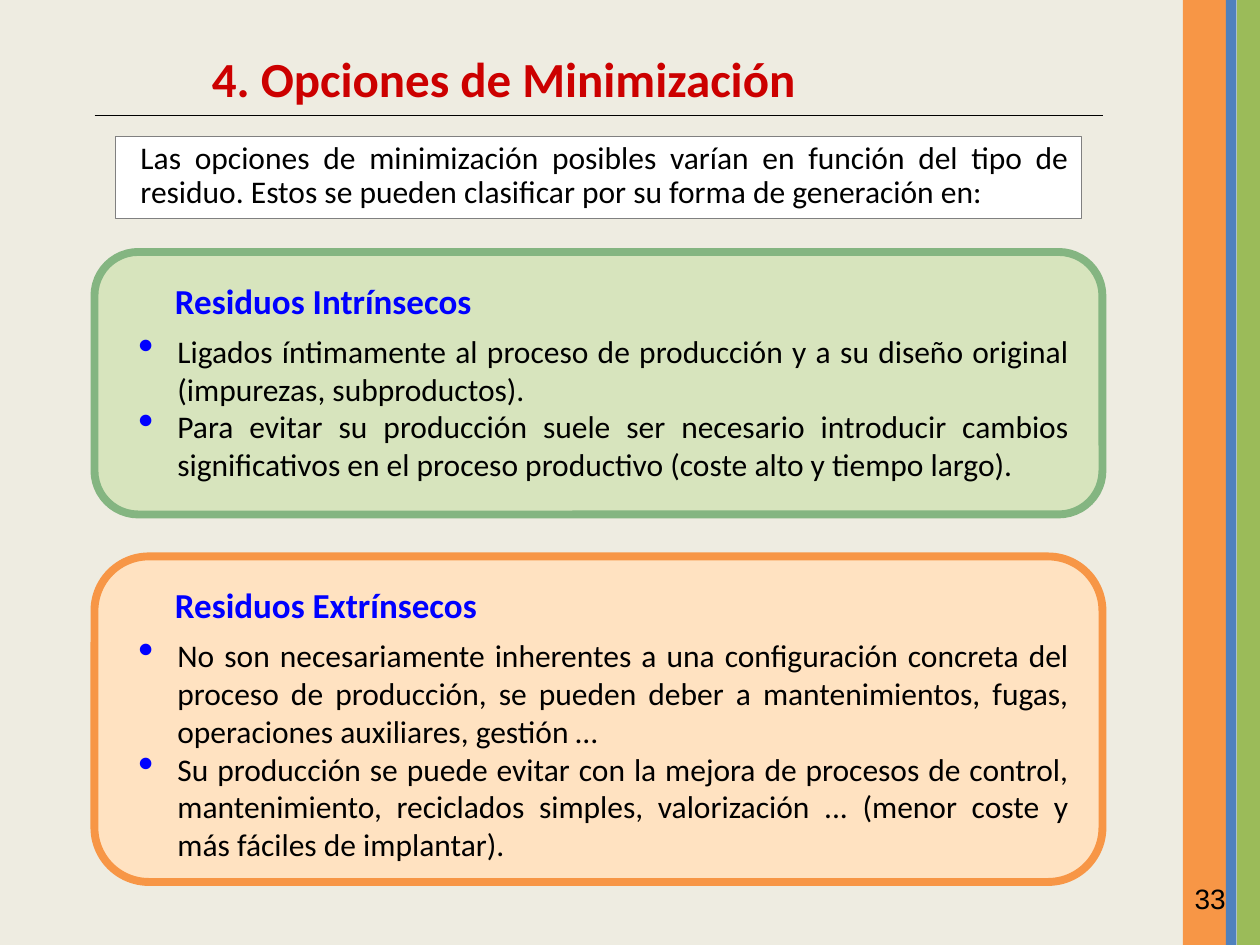
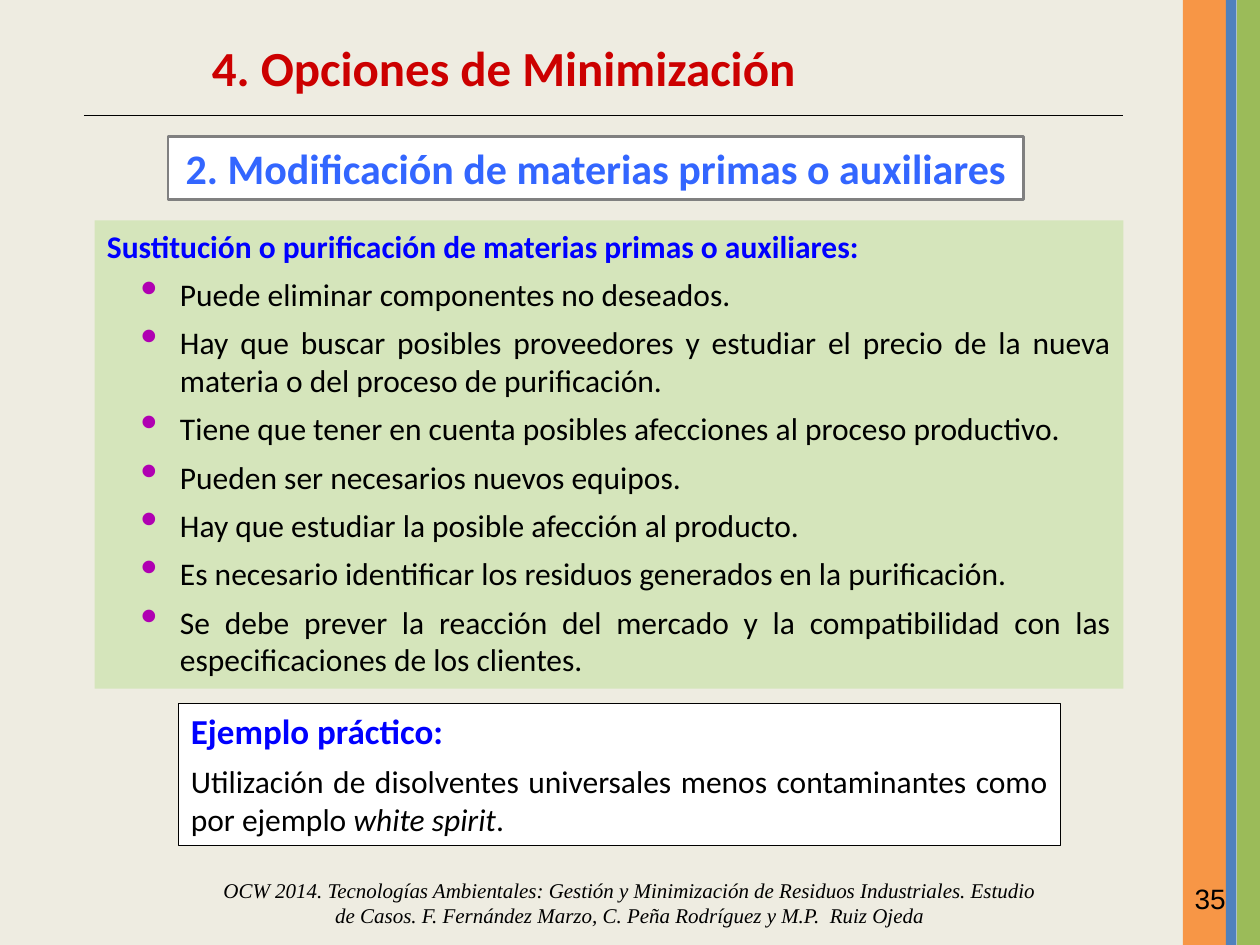
from lxml.etree import SubElement
from pptx import Presentation
from pptx.dml.color import RGBColor
from pptx.enum.shapes import MSO_CONNECTOR, MSO_SHAPE
from pptx.enum.text import MSO_ANCHOR, PP_ALIGN
from pptx.oxml.ns import qn
from pptx.util import Inches, Pt

CREAM = RGBColor(0xEE, 0xEC, 0xE1)
ORANGE = RGBColor(0xF7, 0x96, 0x46)
SKY = RGBColor(0x4F, 0x81, 0xBD)
GREEN = RGBColor(0x9B, 0xBB, 0x59)
WHITE = RGBColor(0xFF, 0xFF, 0xFF)
BLACK = RGBColor(0x00, 0x00, 0x00)
GRAY = RGBColor(0x80, 0x80, 0x80)
RED = RGBColor(0xCC, 0x00, 0x00)
BLUE = RGBColor(0x00, 0x00, 0xFF)
LIGHT_BLUE = RGBColor(0x33, 0x66, 0xFF)
PURPLE = RGBColor(0xB0, 0x00, 0xB2)
PALE_GREEN = RGBColor(0xD7, 0xE4, 0xBD)
LEAF = RGBColor(0x84, 0xB5, 0x81)
PEACH = RGBColor(0xFF, 0xE2, 0xC1)
LIST_GREEN = RGBColor(0xD5, 0xE5, 0xBB)

# Grid of 120 columns by 90 rows, twelve cells to the inch
CELL = Inches(1) / 12


def add_box(page, left, top, width, height, fill=None, line=None, weight=0.75,
            kind=MSO_SHAPE.RECTANGLE):
    """Place a shape, or a text box when there is no fill, in grid cells."""
    area = [round(length * CELL) for length in (left, top, width, height)]
    if fill is None:
        box = page.shapes.add_textbox(*area)
    else:
        box = page.shapes.add_shape(kind, *area)
        box.shadow.inherit = False
        box.fill.solid()
        box.fill.fore_color.rgb = fill
        if line is None:
            box.line.fill.background()
        else:
            box.line.color.rgb = line
            box.line.width = Pt(weight)
    box.text_frame.word_wrap = True
    box.text_frame.vertical_anchor = MSO_ANCHOR.TOP
    return box


def add_para(box, text, size=18, color=BLACK, bold=False, italic=False, font="Calibri",
             align=PP_ALIGN.JUSTIFY, before=0, margin=0, bullet=None):
    """Write the next paragraph; bullet is a (colour, percent) pair."""
    frame = box.text_frame
    para = frame.paragraphs[0] if not frame.text else frame.add_paragraph()
    para.add_run().text = text
    para.alignment = align
    para.space_before = Pt(before)
    properties = para._p.get_or_add_pPr()
    properties.set("marL", str(Inches(margin)))
    if bullet:
        color_of_bullet, percent = bullet
        properties.set("indent", str(Inches(-0.31)))
        holder = SubElement(properties, qn("a:buClr"))
        SubElement(holder, qn("a:srgbClr")).set("val", str(color_of_bullet))
        SubElement(properties, qn("a:buSzPct")).set("val", str(percent * 1000))
        SubElement(properties, qn("a:buChar")).set("char", "•")
    para.font.name = font
    para.font.size = Pt(size)
    para.font.bold = bold
    para.font.italic = italic
    para.font.color.rgb = color
    return para


deck = Presentation()
deck.slide_width = Inches(10)
deck.slide_height = Inches(7.5)

# Shared frame: background, side bands, title, rule and page number
# (page number, title row, rule start, rule end)
pages = []
for number, title_row, rule_start, rule_end in (("33", 4, 9, 105), ("35", 3, 8, 107)):
    page = deck.slides.add_slide(deck.slide_layouts[6])
    page.background.fill.solid()
    page.background.fill.fore_color.rgb = CREAM
    for left, width, color in ((112.65, 4.2, ORANGE), (117.8, 2.2, GREEN), (116.75, 1, SKY)):
        add_box(page, left, 0, width, 90, color)

    rule = page.shapes.add_connector(
        MSO_CONNECTOR.STRAIGHT, round(rule_start * CELL), round(11 * CELL),
        round(rule_end * CELL), round(11 * CELL))
    rule.line.color.rgb = BLACK
    rule.line.width = Pt(0.75)
    SubElement(rule._element.spPr, qn("a:effectLst"))

    title = add_box(page, 19, title_row, 61, 6.8)
    add_para(title, "4. Opciones de Minimización", 28, RED, bold=True, align=PP_ALIGN.LEFT)
    number_box = add_box(page, 112.6, 83.4, 7.4, 6.2)
    add_para(number_box, number, 16, font="Arial", align=PP_ALIGN.LEFT)
    pages.append(page)

waste_page, materials_page = pages

# Introduction to the kinds of waste
intro = add_box(waste_page, 11, 13, 92, 7.8, WHITE, GRAY)
para = add_para(intro, "Las opciones de minimización posibles varían en función del tipo de "
                "residuo. Estos se pueden clasificar por su forma de generación en:", margin=0.1)
para.line_spacing = 0.9

# Two rounded panels, one for each kind of waste
panels = (
    (24, 25, PALE_GREEN, LEAF, "Residuos Intrínsecos", (
        "Ligados íntimamente al proceso de producción y a su diseño original "
        "(impurezas, subproductos).",
        "Para evitar su producción suele ser necesario introducir cambios "
        "significativos en el proceso productivo (coste alto y tiempo largo).")),
    (53, 31, PEACH, ORANGE, "Residuos Extrínsecos", (
        "No son necesariamente inherentes a una configuración concreta del proceso de "
        "producción, se pueden deber a mantenimientos, fugas, operaciones auxiliares, gestión …",
        "Su producción se puede evitar con la mejora de procesos de control, mantenimiento, "
        "reciclados simples, valorización ... (menor coste y más fáciles de implantar).")),
)
for top, height, fill, line, heading, points in panels:
    add_box(waste_page, 9, top, 96, height, fill, line, 4.5, MSO_SHAPE.ROUNDED_RECTANGLE)
    content = add_box(waste_page, 12, top + 2, 91, height - 4)
    add_para(content, heading, 20, BLUE, bold=True, margin=0.29)
    for index, point in enumerate(points):
        add_para(content, point, before=0 if index else 6, margin=0.31, bullet=(BLUE, 140))

# Section heading
section = add_box(materials_page, 16, 13, 81.5, 6, WHITE, GRAY, 1.5)
add_para(section, "2. Modificación de materias primas o auxiliares", 24, LIGHT_BLUE,
         bold=True, align=PP_ALIGN.CENTER)

# Points on replacing or purifying materials
advice = add_box(materials_page, 9, 21, 98, 44.6, LIST_GREEN)
add_para(advice, "Sustitución o purificación de materias primas o auxiliares:", color=BLUE,
         bold=True, align=PP_ALIGN.LEFT)
for point in (
    "Puede eliminar componentes no deseados.",
    "Hay que buscar posibles proveedores y estudiar el precio de la nueva materia o del "
    "proceso de purificación.",
    "Tiene que tener en cuenta posibles afecciones al proceso productivo.",
    "Pueden ser necesarios nuevos equipos.",
    "Hay que estudiar la posible afección al producto.",
    "Es necesario identificar los residuos generados en la purificación.",
    "Se debe prever la reacción del mercado y la compatibilidad con las especificaciones "
    "de los clientes.",
):
    add_para(advice, point, before=6, margin=0.58, bullet=(PURPLE, 153))

# Practical example
example = add_box(materials_page, 17, 67, 84, 13.5, WHITE, BLACK)
add_para(example, "Ejemplo práctico:", 20, BLUE, bold=True)
para = add_para(example, "Utilización de disolventes universales menos contaminantes como "
                "por ejemplo ", before=6)
span = para.add_run()
span.text = "white spirit"
span.font.italic = True
para.add_run().text = "."

# Course credit
credit = add_box(materials_page, 20, 83, 80, 6)
credit.text_frame.vertical_anchor = MSO_ANCHOR.MIDDLE
add_para(credit, "OCW 2014. Tecnologías Ambientales: Gestión y Minimización de Residuos "
         "Industriales. Estudio de Casos. F. Fernández Marzo, C. Peña Rodríguez y "
         "M.P.  Ruiz Ojeda", 12, italic=True, font="Times New Roman", align=PP_ALIGN.CENTER)

deck.save("out.pptx")
